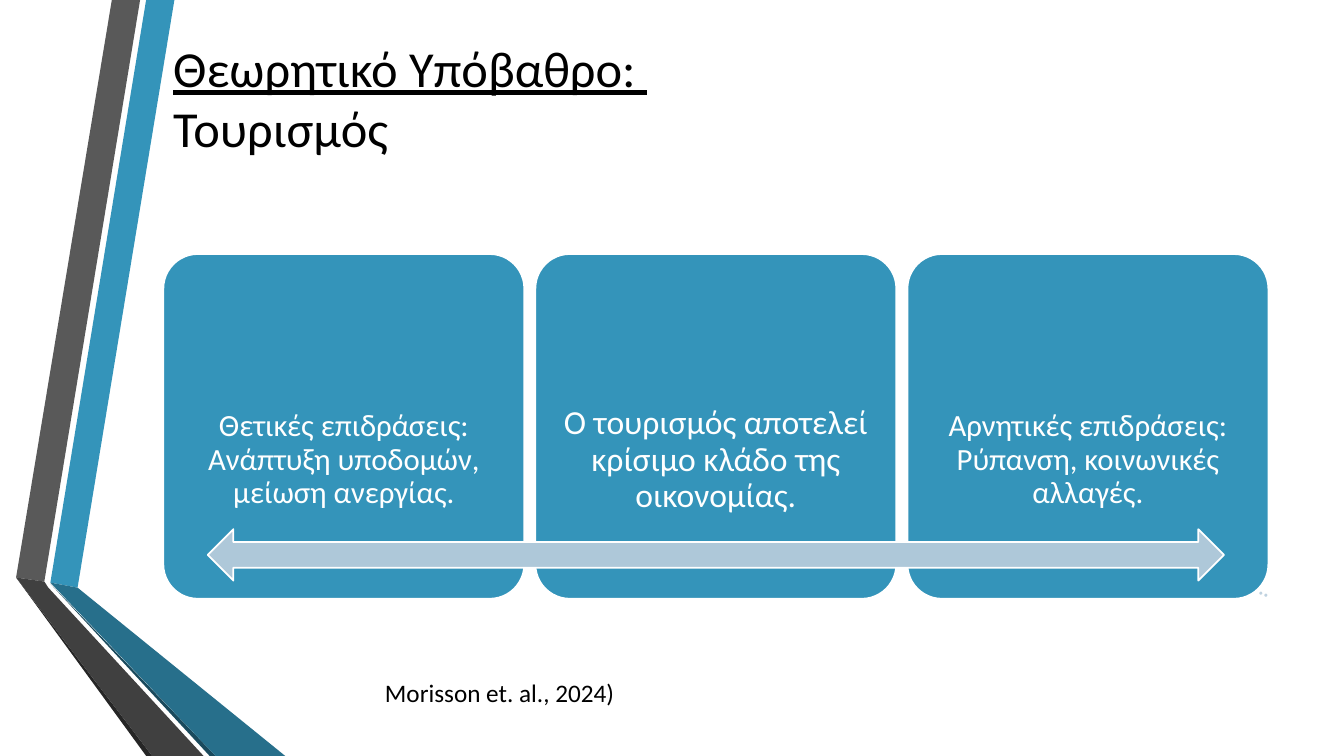
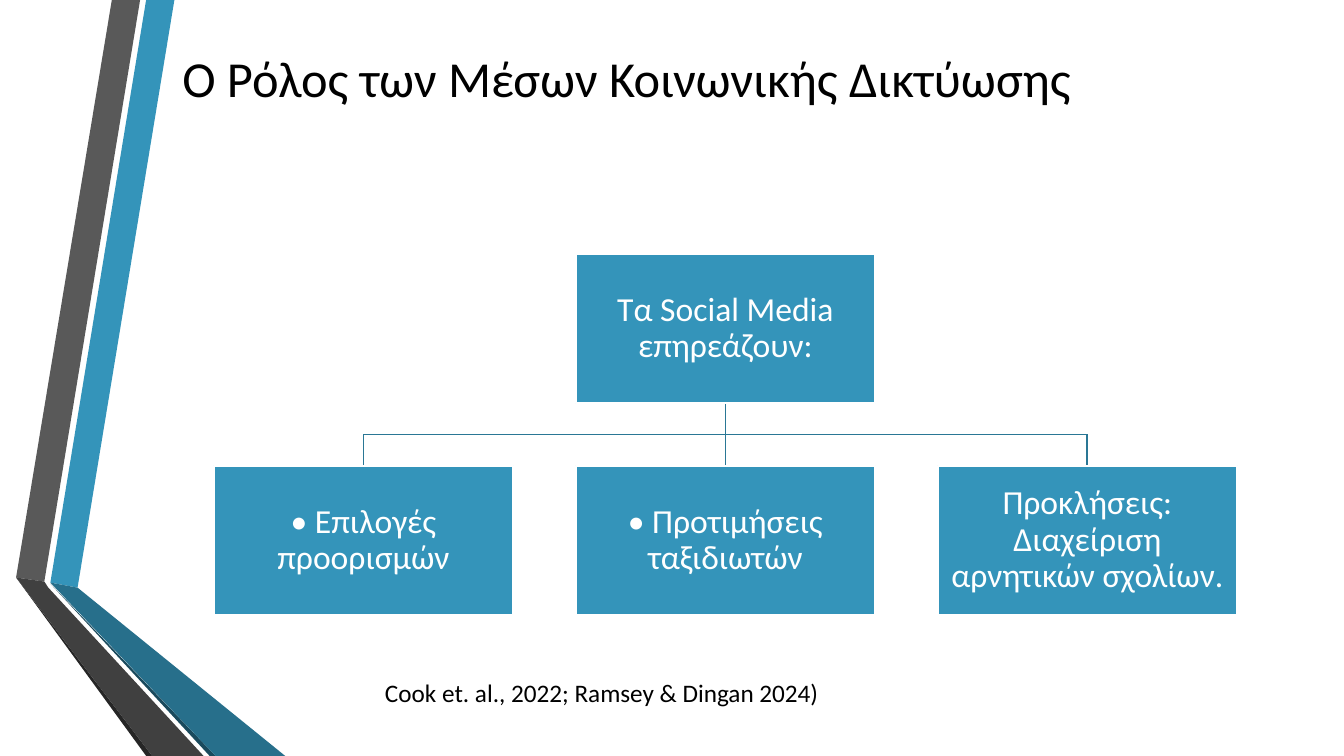
from dataclasses import dataclass

from lxml import etree
from pptx import Presentation
from pptx.dml.color import RGBColor
from pptx.enum.shapes import MSO_CONNECTOR, MSO_SHAPE
from pptx.enum.text import MSO_ANCHOR, PP_ALIGN
from pptx.oxml.ns import qn
from pptx.util import Inches, Pt


@dataclass(frozen=True)
class Theme:
    font: str = "Calibri"
    accent: str = "3494BA"
    connector: str = "2A7795"
    arrow: str = "AEC8D9"
    dot: str = "BFD2E0"
    white: str = "FFFFFF"
    black: str = "000000"
    title_size: int = 36
    large_size: int = 24
    medium_size: int = 22
    citation_size: int = 18
    line_width: float = 1.25


THEME = Theme()

# Content
TOURISM_TITLE = [("Θεωρητικό Υπόβαθρο: ", True), ("Τουρισμός", False)]
TOURISM_CARDS = [
    ("Θετικές επιδράσεις: Ανάπτυξη υποδομών, μείωση ανεργίας.", THEME.medium_size),
    ("Ο τουρισμός αποτελεί κρίσιμο κλάδο της οικονομίας.", THEME.large_size),
    ("Αρνητικές επιδράσεις: Ρύπανση, κοινωνικές αλλαγές.", THEME.medium_size),
]
TOURISM_CITATION = "Morisson et. al., 2024)"

MEDIA_TITLE = [("Ο Ρόλος των Μέσων Κοινωνικής Δικτύωσης", False)]
MEDIA_ROOT = "Τα Social Media επηρεάζουν:"
MEDIA_BRANCHES = [
    "• Επιλογές προορισμών",
    "• Προτιμήσεις ταξιδιωτών",
    "Προκλήσεις: Διαχείριση αρνητικών σχολίων.",
]
MEDIA_CITATION = "Cook et. al., 2022; Ramsey & Dingan 2024)"

# Folded ribbons at the left edge: colour and outline in inches
RIBBONS = [
    ("3494BA", [(0.5, 5.78), (0.77, 5.83), (1.73, 0), (1.45, 0)]),
    ("595959", [(1.39, 0), (1.11, 0), (0.16, 5.73), (0.44, 5.77)]),
    ("262626", [(0.16, 5.73), (1.45, 7.5), (1.51, 7.5)]),
    ("1A4A5D", [(0.5, 5.79), (2.08, 7.5), (2.14, 7.5)]),
    ("276F8B", [(0.5, 5.78), (2.14, 7.5), (2.83, 7.5), (0.77, 5.83)]),
    ("404040", [(2.02, 7.5), (0.48, 5.83), (0.44, 5.77), (0.16, 5.73), (1.51, 7.5)]),
]


def color(value):
    return RGBColor.from_string(value)


def write_text(shape, lines, size, ink=THEME.black, align=PP_ALIGN.LEFT,
               anchor=MSO_ANCHOR.TOP, insets=(0.1, 0.05, 0.1, 0.05), spacing=1.0):
    """Fill a shape with one paragraph; lines holds (text, underlined) pairs."""
    frame = shape.text_frame
    frame.word_wrap = True
    frame.vertical_anchor = anchor
    (frame.margin_left, frame.margin_top,
     frame.margin_right, frame.margin_bottom) = map(Inches, insets)
    para = frame.paragraphs[0]
    para.alignment = align
    para.line_spacing = spacing
    for index, (text, underlined) in enumerate(lines):
        if index:
            para.add_line_break()
        span = para.add_run()
        span.text = text
        span.font.name = THEME.font
        span.font.size = Pt(size)
        span.font.underline = underlined
        span.font.color.rgb = color(ink)


def add_text(page, area, lines, size, **text_format):
    box = page.shapes.add_textbox(*map(Inches, area))
    write_text(box, lines, size, **text_format)


def add_block(page, kind, area, fill):
    block = page.shapes.add_shape(kind, *map(Inches, area))
    block.shadow.inherit = False
    block.fill.solid()
    block.fill.fore_color.rgb = color(fill)
    block.line.color.rgb = color(THEME.white)
    block.line.width = Pt(THEME.line_width)
    return block


def add_labelled_block(page, kind, area, text, size, insets):
    block = add_block(page, kind, area, THEME.accent)
    write_text(block, [(text, False)], size, ink=THEME.white, align=PP_ALIGN.CENTER,
               anchor=MSO_ANCHOR.MIDDLE, insets=insets, spacing=0.9)
    return block


def add_line(page, *ends):
    line = page.shapes.add_connector(MSO_CONNECTOR.STRAIGHT, *map(Inches, ends))
    line.line.color.rgb = color(THEME.connector)
    line.line.width = Pt(THEME.line_width)
    etree.SubElement(line._element.spPr, qn("a:effectLst"))


def add_page(deck, title, title_area, citation):
    """Add a page with the ribbons, title and citation that all pages share."""
    page = deck.slides.add_slide(deck.slide_layouts[6])
    for fill, points in RIBBONS:
        start, *rest = [(Inches(x), Inches(y)) for x, y in points]
        builder = page.shapes.build_freeform(*start)
        builder.add_line_segments(rest, close=True)
        ribbon = builder.convert_to_shape()
        ribbon.shadow.inherit = False
        ribbon.fill.solid()
        ribbon.fill.fore_color.rgb = color(fill)
        ribbon.line.fill.background()
    add_text(page, title_area, title, THEME.title_size, anchor=MSO_ANCHOR.MIDDLE)
    add_text(page, (3.72, 6.67, 4.77, 0.4), [(citation, False)], THEME.citation_size)
    return page


def build_tourism(deck):
    page = add_page(deck, TOURISM_TITLE, (1.62, 0.24, 10.96, 1.45), TOURISM_CITATION)
    # Row of cards, with the text in the lower part
    left, top, width, height, pitch = 1.62, 2.52, 3.58, 3.42, 3.69
    for index, (text, size) in enumerate(TOURISM_CARDS):
        card = add_labelled_block(
            page, MSO_SHAPE.ROUNDED_RECTANGLE,
            (left + index * pitch, top, width, height),
            text, size, insets=(0.08, 1.3, 0.08, 0.63))
        card.adjustments[0] = 0.1
    # Arrow across the cards, and dots at the last corner
    add_block(page, MSO_SHAPE.LEFT_RIGHT_ARROW, (2.06, 5.25, 10.08, 0.51), THEME.arrow)
    for x, y in [(12.53, 5.88), (12.48, 5.86)]:
        add_block(page, MSO_SHAPE.OVAL, (x, y, 0.05, 0.05), THEME.dot)


def build_media(deck):
    page = add_page(deck, MEDIA_TITLE, (1.71, -0.19, 10.96, 1.92), MEDIA_CITATION)
    left, width, height, pitch = 2.12, 2.97, 1.48, 3.59
    root_top, branch_top = 2.52, 4.62
    root_bottom = root_top + height
    bus = (root_bottom + branch_top) / 2
    lefts = [left + index * pitch for index in range(len(MEDIA_BRANCHES))]
    root_left = (lefts[0] + lefts[-1]) / 2
    centers = [x + width / 2 for x in lefts]
    root_center = root_left + width / 2
    # Lines of the tree
    add_line(page, root_center, root_bottom, root_center, bus)
    add_line(page, centers[0], bus, centers[-1], bus)
    for center in centers:
        add_line(page, center, bus, center, branch_top)
    # Boxes of the tree
    nodes = [(root_left, root_top, MEDIA_ROOT)]
    nodes += [(x, branch_top, text) for x, text in zip(lefts, MEDIA_BRANCHES)]
    for x, y, text in nodes:
        add_labelled_block(page, MSO_SHAPE.RECTANGLE, (x, y, width, height),
                           text, THEME.large_size, insets=(0.02,) * 4)


def main():
    deck = Presentation()
    deck.slide_width, deck.slide_height = Inches(13.33), Inches(7.5)
    build_tourism(deck)
    build_media(deck)
    deck.save("out.pptx")


if __name__ == "__main__":
    main()
